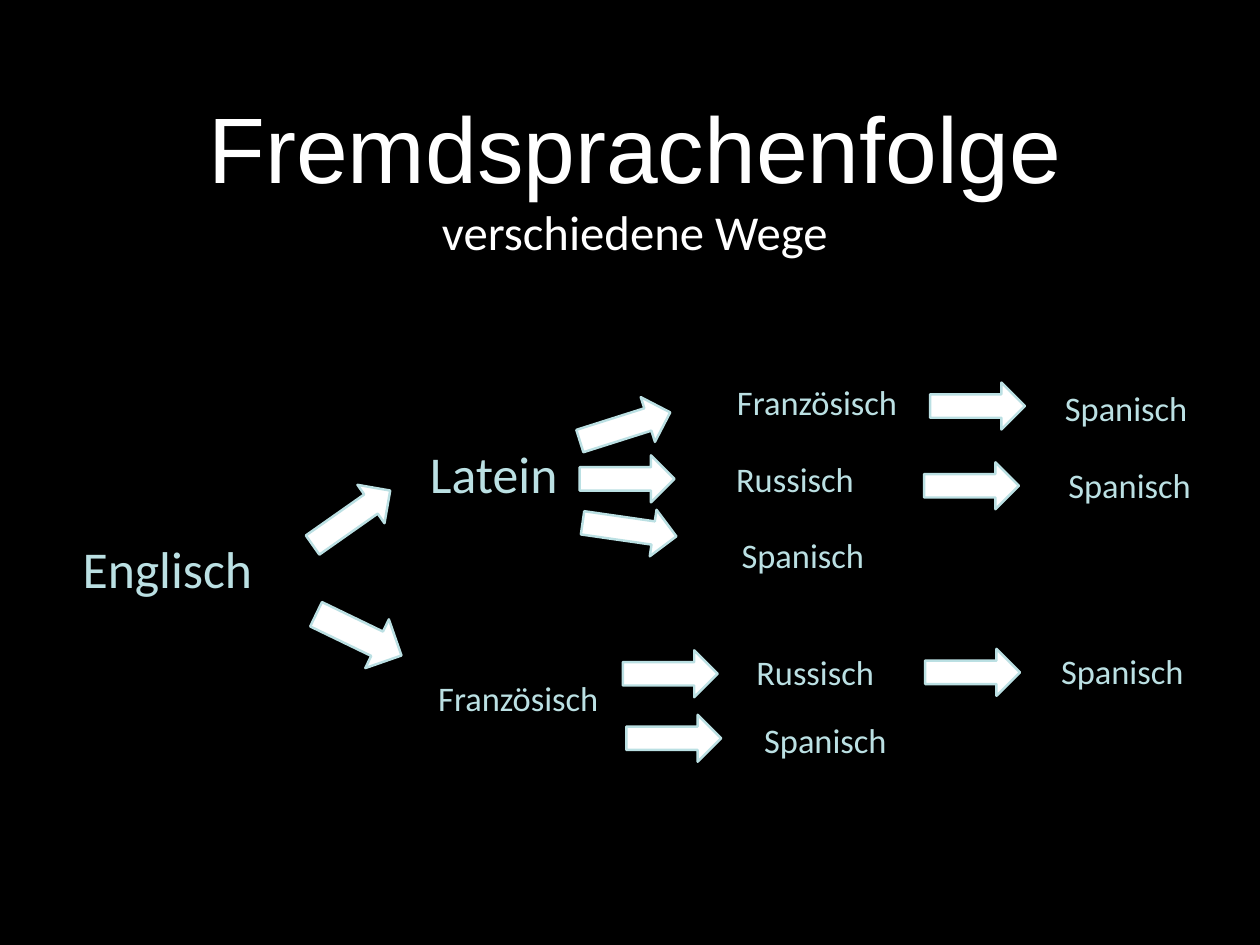
from pptx import Presentation
from pptx import util as u
from pptx.dml.color import RGBColor
from pptx.enum import shapes, text

COLUMNS, ROWS = 128, 96
CELL = u.Inches(1 / 9)
COLORS = {"background": "000000", "title": "FFFFFF", "arrow": "FFFFFF", "accent": "BBE0E3"}
LARGE, SMALL = 42, 28
WORD_HEIGHTS = {LARGE: 7.3, SMALL: 5.1}
ARROW_SIZE = (9.63, 4.77)

# Word, centre column, centre row, width, point size
WORDS = [
    ("Englisch", 9, 30.7, 22, LARGE),
    ("Latein", 42.15, 21.1, 17.7, LARGE),
    ("Französisch", 44.65, 43.9, 21.2, SMALL),
    ("Französisch", 75, 13.8, 24.5, SMALL),
    ("Russisch", 72.75, 21.65, 20.4, SMALL),
    ("Spanisch", 73.55, 29.4, 16.7, SMALL),
    ("Russisch", 74.8, 41.2, 19.2, SMALL),
    ("Spanisch", 75.85, 48.2, 17, SMALL),
    ("Spanisch", 106.4, 14.4, 17.1, SMALL),
    ("Spanisch", 106.75, 22.2, 17.6, SMALL),
    ("Spanisch", 106, 41.1, 16.7, SMALL),
]

# Centre column, centre row, rotation, height
ARROWS = [
    (27.7, 25.6, -35.1, ARROW_SIZE[1]),
    (28.45, 37.5, 25.8, 5.5),
    (55.5, 16.35, -17.6, ARROW_SIZE[1]),
    (55.7, 21.65, 0, ARROW_SIZE[1]),
    (55.95, 26.8, 8.2, ARROW_SIZE[1]),
    (60.1, 41.45, 0, ARROW_SIZE[1]),
    (60.45, 48, 0, ARROW_SIZE[1]),
    (91.3, 14.25, 0, ARROW_SIZE[1]),
    (90.7, 22.35, 0, ARROW_SIZE[1]),
    (90.8, 41.3, 0, ARROW_SIZE[1]),
]


def color(name):
    """Return the named colour."""
    return RGBColor.from_string(COLORS[name])


def cells(*lengths):
    """Convert grid cells to slide lengths."""
    return [round(length * CELL) for length in lengths]


def centred(box, column, row, width, height):
    """Return the area centred on a grid point of the box."""
    return cells(box[0] + column - width / 2, box[1] + row - height / 2, width, height)


def add_text(slide, area, content, fonts, color_name, inset, anchor):
    """Add centred text with one (font, size) pair per run."""
    frame = slide.shapes.add_textbox(*area).text_frame
    frame.word_wrap = True
    frame.vertical_anchor = anchor
    frame.margin_left = frame.margin_right = u.Inches(inset)
    frame.margin_top = frame.margin_bottom = u.Inches(inset)
    frame.text = content
    paragraph = frame.paragraphs[0]
    paragraph.alignment = text.PP_ALIGN.CENTER
    for run, (name, size) in zip(paragraph.runs, fonts):
        run.font.name = name
        run.font.size = u.Pt(size)
        run.font.color.rgb = color(color_name)


def add_title(slide, box):
    """Place the heading and its second line."""
    add_text(slide, cells(*box), "Fremdsprachenfolge\vverschiedene Wege",
             [("Arial", 75.6), ("Calibri", 39.6)], "title", 0.06, text.MSO_ANCHOR.BOTTOM)


def add_arrow(slide, area, rotation):
    """Add one outlined block arrow."""
    arrow = slide.shapes.add_shape(shapes.MSO_SHAPE.RIGHT_ARROW, *area)
    arrow.rotation = rotation
    arrow.shadow.inherit = False
    arrow.fill.solid()
    arrow.fill.fore_color.rgb = color("arrow")
    arrow.line.color.rgb = color("accent")
    arrow.line.width = u.Pt(2)


def add_language_paths(slide, box):
    """Place the languages and the arrows between them."""
    for column, row, rotation, height in ARROWS:
        add_arrow(slide, centred(box, column, row, ARROW_SIZE[0], height), rotation)
    for word, column, row, width, size in WORDS:
        add_text(slide, centred(box, column, row, width, WORD_HEIGHTS[size]), word,
                 [("Calibri", size)], "accent", 0.05, text.MSO_ANCHOR.TOP)


def main():
    """Build and save the slide."""
    presentation = Presentation()
    presentation.slide_width, presentation.slide_height = cells(COLUMNS, ROWS)
    slide = presentation.slides.add_slide(presentation.slide_layouts[6])
    slide.background.fill.solid()
    slide.background.fill.fore_color.rgb = color("background")
    add_title(slide, (6.75, 10.5, 115.5, 16.5))
    add_language_paths(slide, (8, 27, 116, 54))
    presentation.save("out.pptx")


if __name__ == "__main__":
    main()
